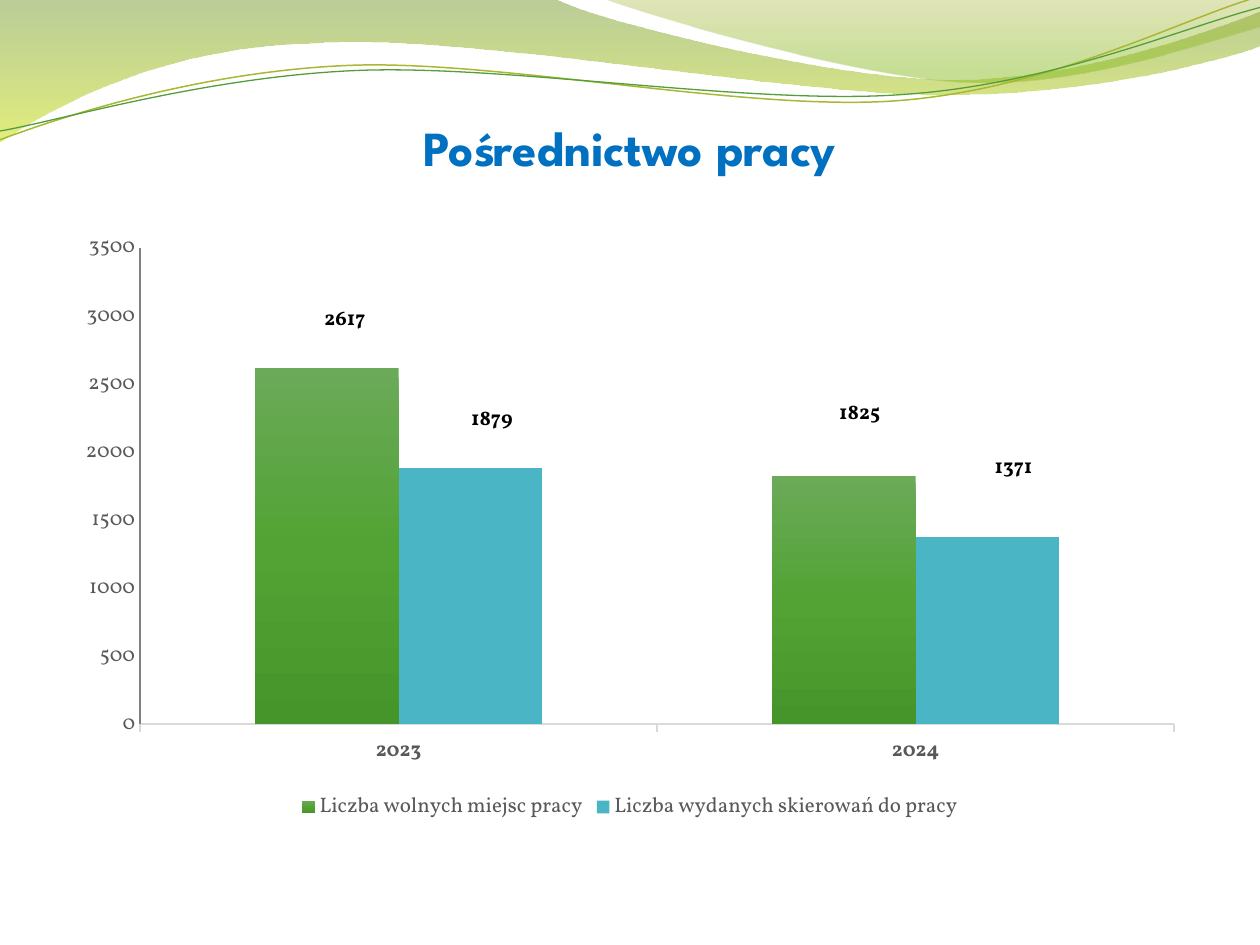
from math import cos, radians, sin

from lxml import etree
from pptx import Presentation
from pptx.chart.data import CategoryChartData
from pptx.dml.color import RGBColor
from pptx.enum.chart import XL_CHART_TYPE, XL_LABEL_POSITION, XL_LEGEND_POSITION, XL_TICK_MARK
from pptx.enum.text import MSO_ANCHOR, PP_ALIGN
from pptx.oxml.ns import qn
from pptx.util import Inches, Pt

BANDS = [
    ((0, 0), [(4.4, -0.01), (4.75, 0.17, 6.63, 0.63, 7.58, 0.63),
              (8.53, 0.63, 9.58, 0.26, 10, 0.09), (10.01, 0.36),
              (9.83, 0.44, 8.69, 0.76, 7.46, 0.75), (6.22, 0.75, 3.81, 0.28, 2.57, 0.34),
              (1.29, 0.36, 0.46, 0.83, -0.01, 1.13), (0, 0)],
     [(0, "69921C", 45), (100, "CCE10F", 55)]),
    ((4.79, -0.01), [(5.09, 0.11, 6.82, 0.62, 7.68, 0.65),
                     (8.55, 0.69, 9.61, 0.32, 10, 0.21), (10, 0), (4.79, -0.01)],
     [(0, "9BAA1A", 30), (80, "81BA16", 45)]),
]
TILT = 2.7
STRANDS = [
    ((0, 1.11), [(0.48, 0.93, 1.57, 0.57, 2.76, 0.52), (3.95, 0.47, 5.92, 0.89, 7.12, 0.8),
                 (8.33, 0.71, 9.38, 0.15, 9.97, -0.02)], (4.99, 0.58), "A9B733", 0.85),
    ((0, 1.04), [(0.47, 0.96, 1.63, 0.61, 2.83, 0.56), (4.02, 0.51, 5.97, 0.84, 7.17, 0.75),
                 (8.36, 0.67, 9.41, 0.21, 10, 0.06)], (5, 0.59), "549E39", 0.75),
]
GREEN_STOPS = [(0, "6BAA59", 100), (50, "52A334", 100), (100, "46952A", 100)]
SERIES = [
    ("Liczba wolnych miejsc pracy", (2617, 1825), [(1.6, -4.7), (1.4, -6.9)]),
    ("Liczba wydanych skierowań do pracy", (1879, 1371), [(1.9, -4.8), (2.3, -8.2)]),
]


def color(value):
    """Turn a hex string into a colour."""
    return RGBColor.from_string(value)


def style_font(font, name, size, value, bold=False):
    """Set typeface, size, colour and weight."""
    font.name, font.size, font.bold = name, Pt(size), bold
    font.color.rgb = color(value)


def style_line(line, value, width):
    """Set the colour and width of a line."""
    line.color.rgb = color(value)
    line.width = Pt(width)


def fill_gradient(fill, element, stops):
    """Fill from top to bottom with stops of position, colour and opacity."""
    fill.gradient()
    fill.gradient_angle = 270
    stop_list = next(element.iter(qn("a:gsLst")))
    for stop in list(stop_list):
        stop_list.remove(stop)
    for position, value, opacity in stops:
        stop = etree.SubElement(stop_list, qn("a:gs"), pos=str(position * 1000))
        shade = etree.SubElement(stop, qn("a:srgbClr"), val=value)
        if opacity < 100:
            etree.SubElement(shade, qn("a:alpha"), val=str(opacity * 1000))


def turn(point, center, degrees):
    """Rotate a point clockwise about a centre."""
    x, y = point[0] - center[0], point[1] - center[1]
    cosine, sine = cos(radians(degrees)), sin(radians(degrees))
    return center[0] + x * cosine - y * sine, center[1] + x * sine + y * cosine


def add_outline(slide, left, top, start, segments, close, center=(0, 0), tilt=0):
    """Add a freeform of straight and cubic segments, tilted back about its centre."""
    points = [start] + [segment[index:index + 2] for segment in segments
                        for index in range(0, len(segment), 2)]
    points = [turn(point, center, tilt) for point in points]
    points = [(Inches(left + x), Inches(top + y)) for x, y in points]
    builder = slide.shapes.build_freeform(*points[0], scale=1.0)
    builder.add_line_segments(points[1:], close=close)
    shape = builder.convert_to_shape()
    shape.shadow.inherit = False
    shape.rotation = -tilt % 360
    steps = iter(list(shape.element.iter(qn("a:lnTo"))))
    for segment in segments:
        step = next(steps)
        if len(segment) == 6:
            curve = etree.Element(qn("a:cubicBezTo"))
            step.addprevious(curve)
            for line in (step, next(steps), next(steps)):
                curve.append(line[0])
                line.getparent().remove(line)
    return shape


def add_waves(slide, left, top):
    """Add the translucent bands and thin strands of the header."""
    for start, segments, stops in BANDS:
        band = add_outline(slide, left, top, start, segments, True)
        fill_gradient(band.fill, band.element, stops)
        band.line.fill.background()
    for start, segments, center, value, width in STRANDS:
        strand = add_outline(slide, left, top, start, segments, False, center, TILT)
        strand.fill.background()
        style_line(strand.line, value, width)


def add_title(slide, left, top, width, height):
    """Add the centred heading."""
    box = slide.shapes.add_textbox(Inches(left), Inches(top), Inches(width), Inches(height))
    frame = box.text_frame
    frame.word_wrap = True
    frame.vertical_anchor = MSO_ANCHOR.BOTTOM
    frame.margin_left = frame.margin_right = frame.margin_bottom = 0
    frame.margin_top = Inches(0.05)
    frame.text = "Pośrednictwo pracy"
    paragraph = frame.paragraphs[0]
    paragraph.alignment = PP_ALIGN.CENTER
    style_font(paragraph.runs[0].font, "League Spartan", 28, "0070C0", True)


def manual_layout(modes, **percents):
    """Build a chart layout element from modes and percentages."""
    layout = etree.Element(qn("c:layout"))
    manual = etree.SubElement(layout, qn("c:manualLayout"))
    for name, value in modes.items():
        etree.SubElement(manual, qn(f"c:{name}"), val=value)
    for name, value in percents.items():
        etree.SubElement(manual, qn(f"c:{name}"), val=f"{value / 100:.3f}")
    return layout


def style_axes(chart):
    """Format both axes."""
    category, value = chart.category_axis, chart.value_axis
    style_font(category.tick_labels.font, "Vollkorn", 12, "595959", True)
    style_line(category.format.line, "D9D9D9", 1)
    category.major_tick_mark = XL_TICK_MARK.OUTSIDE
    style_font(value.tick_labels.font, "Vollkorn", 12, "595959")
    style_line(value.format.line, "808080", 0.75)
    value.major_tick_mark = XL_TICK_MARK.NONE
    value.has_major_gridlines = False
    value.minimum_scale, value.maximum_scale, value.major_unit = 0, 3500, 500


def add_labels(series, offsets):
    """Label each bar, shifted from its outer end and without leader lines."""
    labels = series.data_labels
    labels.show_value = True
    style_font(labels.font, "Vollkorn", 12, "000000", True)
    for index in range(len(offsets)):
        label = series.points[index].data_label
        label.position = XL_LABEL_POSITION.OUTSIDE_END
        style_font(label.font, "Vollkorn", 12, "000000", True)
    element = labels._element
    for label, (x, y) in zip(element.findall(qn("c:dLbl")), offsets):
        label.find(qn("c:idx")).addnext(manual_layout({}, x=x, y=y))
    for leader in element.findall(qn("c:showLeaderLines")):
        leader.set("val", "0")


def add_job_chart(slide, left, top, width, height):
    """Add the clustered columns of vacancies and referrals."""
    data = CategoryChartData()
    data.categories = ["2023", "2024"]
    for name, values, _ in SERIES:
        data.add_series(name, values)
    chart = slide.shapes.add_chart(XL_CHART_TYPE.COLUMN_CLUSTERED, Inches(left), Inches(top),
                                   Inches(width), Inches(height), data).chart
    style_font(chart.font, "Vollkorn", 10, "000000")
    chart.has_title = False
    chart.has_legend = True
    chart.legend.position = XL_LEGEND_POSITION.BOTTOM
    chart.legend.include_in_layout = False
    style_font(chart.legend.font, "Vollkorn", 12, "595959")
    style_axes(chart)
    plot = chart.plots[0]
    plot.gap_width, plot.overlap, plot.vary_by_categories = 160, 0, False
    for series, (_, _, offsets) in zip(plot.series, SERIES):
        add_labels(series, offsets)
    vacancies, referrals = plot.series
    fill_gradient(vacancies.format.fill, vacancies._element, GREEN_STOPS)
    referrals.format.fill.solid()
    referrals.format.fill.fore_color.rgb = color("4AB5C4")
    plot_area = next(chart.element.iter(qn("c:plotArea")))
    for layout in plot_area.findall(qn("c:layout")):
        plot_area.remove(layout)
    modes = {"layoutTarget": "inner", "xMode": "edge", "yMode": "edge"}
    plot_area.insert(0, manual_layout(modes, x=6.8, y=4.3, w=91.2, h=78.8))


def main():
    """Build and save the slide."""
    presentation = Presentation()
    presentation.slide_width, presentation.slide_height = Inches(10), Inches(7.5)
    slide = presentation.slides.add_slide(presentation.slide_layouts[6])
    add_waves(slide, 0, 0)
    add_title(slide, 0.5, 0.15, 9, 1.25)
    add_job_chart(slide, 0.5, 1.76, 9, 4.8)
    presentation.save("out.pptx")


if __name__ == "__main__":
    main()
